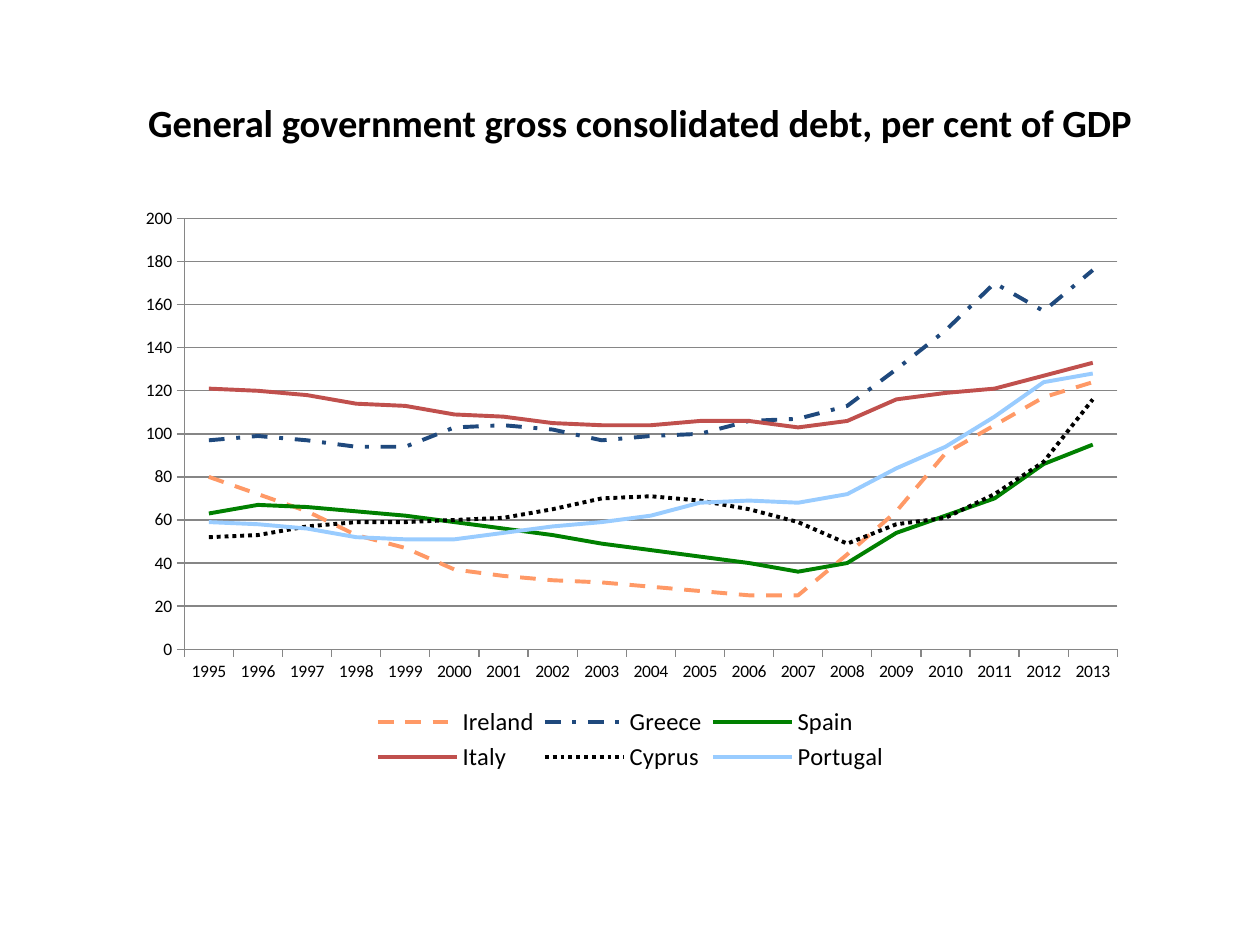
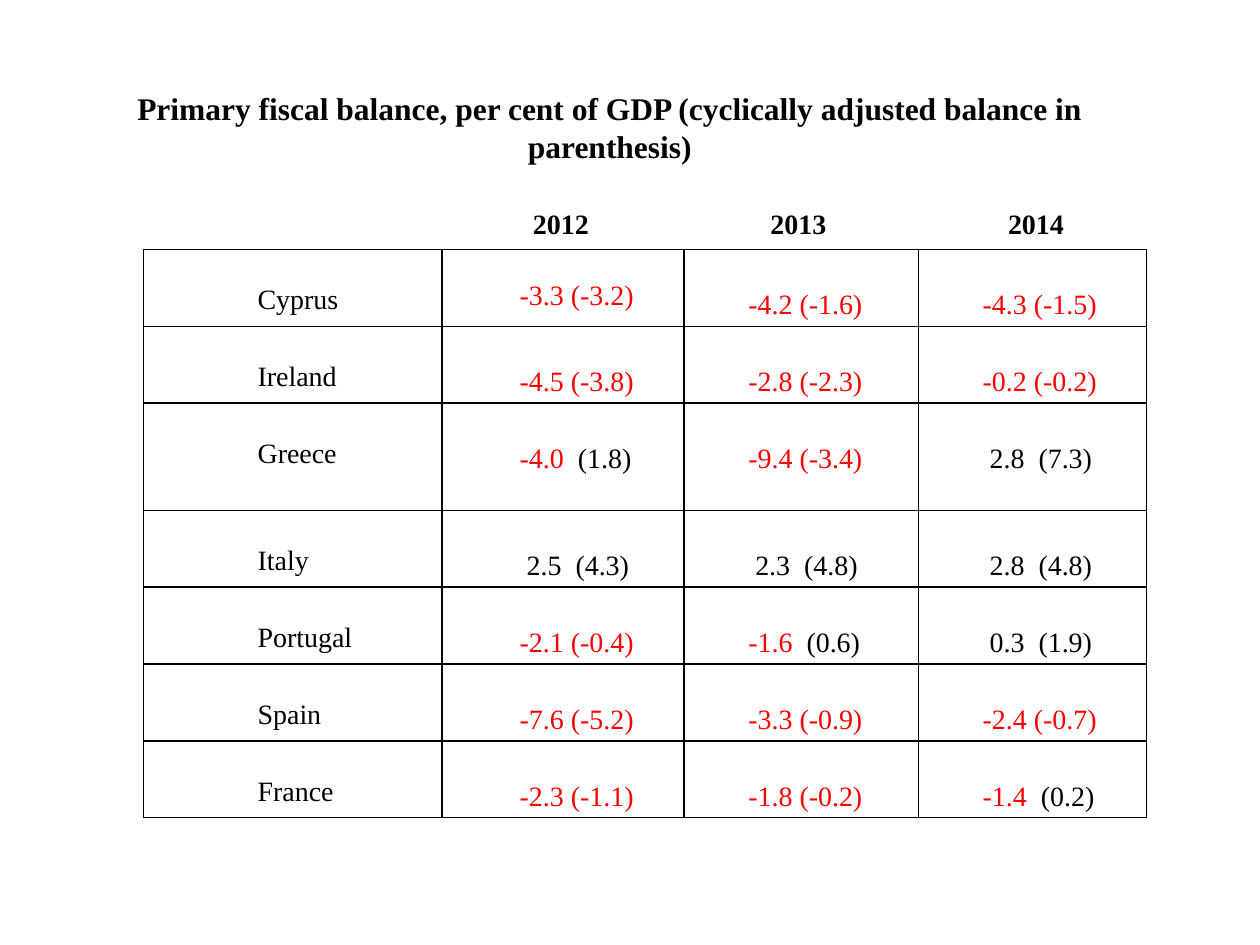
from lxml import etree
from pptx import Presentation
from pptx.chart.data import CategoryChartData
from pptx.dml.color import RGBColor
from pptx.enum.chart import XL_CHART_TYPE, XL_LEGEND_POSITION, XL_TICK_MARK
from pptx.enum.dml import MSO_LINE
from pptx.enum.text import MSO_ANCHOR, PP_ALIGN
from pptx.oxml.ns import qn
from pptx.util import Inches, Pt

BLACK = RGBColor(0x00, 0x00, 0x00)
RED = RGBColor(0xFF, 0x00, 0x00)
GREY = RGBColor(0x86, 0x86, 0x86)
ORANGE = RGBColor(0xFF, 0x99, 0x66)
NAVY = RGBColor(0x1F, 0x49, 0x7D)
GREEN = RGBColor(0x00, 0x80, 0x00)
BRICK = RGBColor(0xC0, 0x50, 0x4D)
SKY = RGBColor(0x99, 0xCC, 0xFF)

SANS, SERIF = "Calibri", "Times New Roman"
LEFT, CENTER = PP_ALIGN.LEFT, PP_ALIGN.CENTER
TOP, MIDDLE = MSO_ANCHOR.TOP, MSO_ANCHOR.MIDDLE
LINE, BOTTOM = XL_CHART_TYPE.LINE, XL_LEGEND_POSITION.BOTTOM
SOLID, DASH = MSO_LINE.SOLID, MSO_LINE.DASH
DOT, DASH_DOT = MSO_LINE.ROUND_DOT, MSO_LINE.DASH_DOT
OUT, NONE = XL_TICK_MARK.OUTSIDE, XL_TICK_MARK.NONE

COLS, ROWS = 20, 15
WIDTH, HEIGHT = Inches(10), Inches(7.5)

YEARS = [str(year) for year in range(1995, 2014)]
DEBT = [
    ("Ireland", ORANGE, DASH, [80, 72, 64, 53, 47, 37, 34, 32, 31, 29, 27, 25,
                               25, 44, 64, 91, 104, 117, 124]),
    ("Greece", NAVY, DASH_DOT, [97, 99, 97, 94, 94, 103, 104, 102, 97, 99, 100,
                                106, 107, 113, 130, 148, 170, 157, 176]),
    ("Spain", GREEN, SOLID, [63, 67, 66, 64, 62, 59, 56, 53, 49, 46, 43, 40,
                             36, 40, 54, 62, 70, 86, 95]),
    ("Italy", BRICK, SOLID, [121, 120, 118, 114, 113, 109, 108, 105, 104, 104,
                             106, 106, 103, 106, 116, 119, 121, 127, 133]),
    ("Cyprus", BLACK, DOT, [52, 53, 57, 59, 59, 60, 61, 65, 70, 71, 69, 65,
                            59, 49, 58, 61, 72, 87, 116]),
    ("Portugal", SKY, SOLID, [59, 58, 56, 52, 51, 51, 54, 57, 59, 62, 68, 69,
                              68, 72, 84, 94, 108, 124, 128]),
]
BALANCE = [
    ("Cyprus", "-3.3 (-3.2)", "-4.2 (-1.6)", "-4.3 (-1.5)"),
    ("Ireland", "-4.5 (-3.8)", "-2.8 (-2.3)", "-0.2 (-0.2)"),
    ("Greece", "-4.0 (1.8)", "-9.4 (-3.4)", "2.8 (7.3)"),
    ("Italy", "2.5 (4.3)", "2.3 (4.8)", "2.8 (4.8)"),
    ("Portugal", "-2.1 (-0.4)", "-1.6 (0.6)", "0.3 (1.9)"),
    ("Spain", "-7.6 (-5.2)", "-3.3 (-0.9)", "-2.4 (-0.7)"),
    ("France", "-2.3 (-1.1)", "-1.8 (-0.2)", "-1.4 (0.2)"),
]


def across(cols):
    return int(WIDTH * cols / COLS)


def down(rows):
    return int(HEIGHT * rows / ROWS)


def place(x, y, w, h):
    return across(x), down(y), across(w), down(h)


def put(frame, text, size=16, font=SERIF, color=BLACK, bold=False,
        align=LEFT, spread=0):
    """Append a run to the frame; spread is extra letter spacing in points."""
    par = frame.paragraphs[0]
    par.alignment = align
    run = par.add_run()
    run.text = text
    run.font.size, run.font.name = Pt(size), font
    run.font.bold, run.font.color.rgb = bold, color
    if spread:
        run._r.get_or_add_rPr().set("spc", str(spread * 100))


def pin(x, y, w, h, inner=False):
    """Return a manual chart layout given in shares of the chart."""
    layout = etree.Element(qn("c:layout"))
    manual = etree.SubElement(layout, qn("c:manualLayout"))
    marks = [("layoutTarget", "inner")] if inner else []
    marks += [("xMode", "edge"), ("yMode", "edge"),
              ("x", x), ("y", y), ("w", w), ("h", h)]
    for tag, val in marks:
        etree.SubElement(manual, qn("c:" + tag)).set("val", str(val))
    return layout


def rule(cell, width=1):
    """Draw black borders on all four sides of a cell."""
    props = cell._tc.get_or_add_tcPr()
    for spot, side in enumerate("LRTB"):
        line = etree.Element(qn("a:ln" + side), w=str(Pt(width)))
        fill = etree.SubElement(line, qn("a:solidFill"))
        etree.SubElement(fill, qn("a:srgbClr")).set("val", str(BLACK))
        props.insert(spot, line)


class Deck:
    def __init__(self):
        self.file = Presentation()
        self.file.slide_width, self.file.slide_height = WIDTH, HEIGHT
        self.page = None

    def start(self):
        self.page = self.file.slides.add_slide(self.file.slide_layouts[6])

    def text(self, at, words, anchor=TOP, tabs=(), **style):
        frame = self.page.shapes.add_textbox(*place(*at)).text_frame
        frame.word_wrap = True
        frame.vertical_anchor = anchor
        put(frame, words, **style)
        if tabs:
            props = frame.paragraphs[0]._p.get_or_add_pPr()
            stops = etree.SubElement(props, qn("a:tabLst"))
            for tab in tabs:
                etree.SubElement(stops, qn("a:tab"), pos=str(across(tab)), algn="l")
        return frame

    def title(self, at, words, **style):
        self.text(at, words, anchor=MIDDLE, bold=True, align=CENTER, **style)

    def chart(self, at, names, rows):
        data = CategoryChartData(number_format="#,##0")
        data.categories = names
        for name, _, _, vals in rows:
            data.add_series(name, vals)
        chart = self.page.shapes.add_chart(LINE, *place(*at), data).chart
        chart.has_title = False
        chart.font.name, chart.font.size = SANS, Pt(10)
        chart.font.color.rgb = BLACK
        chart.plots[0].vary_by_categories = False
        for line, (_, color, dash, _) in zip(chart.plots[0].series, rows):
            line.smooth = False
            pen = line.format.line
            pen.color.rgb, pen.width, pen.dash_style = color, Pt(2.25), dash
        self.axes(chart)
        self.legend(chart)

    def axes(self, chart):
        scale = chart.value_axis
        scale.minimum_scale, scale.maximum_scale, scale.major_unit = 0, 200, 20
        scale.has_major_gridlines = True
        scale.tick_labels.number_format = "#,##0"
        scale.tick_labels.number_format_is_linked = False
        for axis in (scale, chart.category_axis):
            axis.major_tick_mark, axis.minor_tick_mark = OUT, NONE
        for part in (scale, chart.category_axis, scale.major_gridlines):
            part.format.line.color.rgb = GREY
            part.format.line.width = Pt(0.75)
        area = chart._chartSpace.find(".//" + qn("c:plotArea"))
        for old in area.findall(qn("c:layout")):
            area.remove(old)
        area.insert(0, pin(0.06, 0.04, 0.92, 0.74, inner=True))

    def legend(self, chart):
        chart.has_legend = True
        key = chart.legend
        key.position, key.include_in_layout = BOTTOM, False
        key.font.size, key.font.name = Pt(14), SANS
        key.font.color.rgb = BLACK
        node = chart._chartSpace.find(".//" + qn("c:legend"))
        for old in node.findall(qn("c:layout")):
            node.remove(old)
        node.find(qn("c:legendPos")).addnext(pin(0.24, 0.87, 0.52, 0.13))

    def table(self, at, rows, widths, heights, indents):
        shape = self.page.shapes.add_table(len(rows), len(widths), *place(*at))
        table = shape.table
        table.first_row = table.horz_banding = False
        for col, width in zip(table.columns, widths):
            col.width = across(width)
        for row, height, words in zip(table.rows, heights, rows):
            row.height = down(height)
            for cell, word, indent in zip(row.cells, words, indents):
                self.cell(cell, word, indent)
        return table

    def cell(self, cell, word, indent):
        name, _, cycle = word.partition(" ")
        plus = bool(cycle) and not name.startswith("-")
        cell.margin_left = across(indent + 0.11 * plus)
        cell.margin_right = cell.margin_bottom = 0
        cell.margin_top = down(0.64 if cycle else 0.56)
        cell.vertical_anchor = TOP
        cell.fill.background()
        rule(cell)
        frame = cell.text_frame
        put(frame, name, color=RED if name.startswith("-") else BLACK)
        if cycle:
            minus = "-" in cycle
            put(frame, " ", spread=0 if minus else 4)
            put(frame, cycle, color=RED if minus else BLACK)


def debt(deck):
    deck.start()
    deck.title((1.66, 0.92, 17, 2.04),
               "General government gross consolidated debt, per cent of GDP",
               size=22, font=SANS)
    deck.chart((1.96, 3.1, 16.1, 9.24), YEARS, DEBT)


def balance(deck):
    deck.start()
    deck.title((1.18, 0.92, 17, 2.2),
               "Primary fiscal balance, per cent of GDP "
               "(cyclically adjusted balance in parenthesis)", size=18)
    heights = [1.7 if row[0] == "Greece" else 1.22 for row in BALANCE]
    table = deck.table((2.28, 3.96, 15.92, sum(heights)), BALANCE,
                       widths=(4.74, 3.84, 3.72, 3.62), heights=heights,
                       indents=(1.81, 1.23, 1.02, 1.02))
    table.cell(0, 1).margin_top = down(0.5)
    step = 3.77
    frame = deck.text((4.96, 3.18, 13.22, 0.74), "2012\t2013\t2014",
                      bold=True, tabs=(step, 2 * step))
    frame.margin_left = across(3.5)


def main():
    deck = Deck()
    debt(deck)
    balance(deck)
    deck.file.save("out.pptx")


if __name__ == "__main__":
    main()
